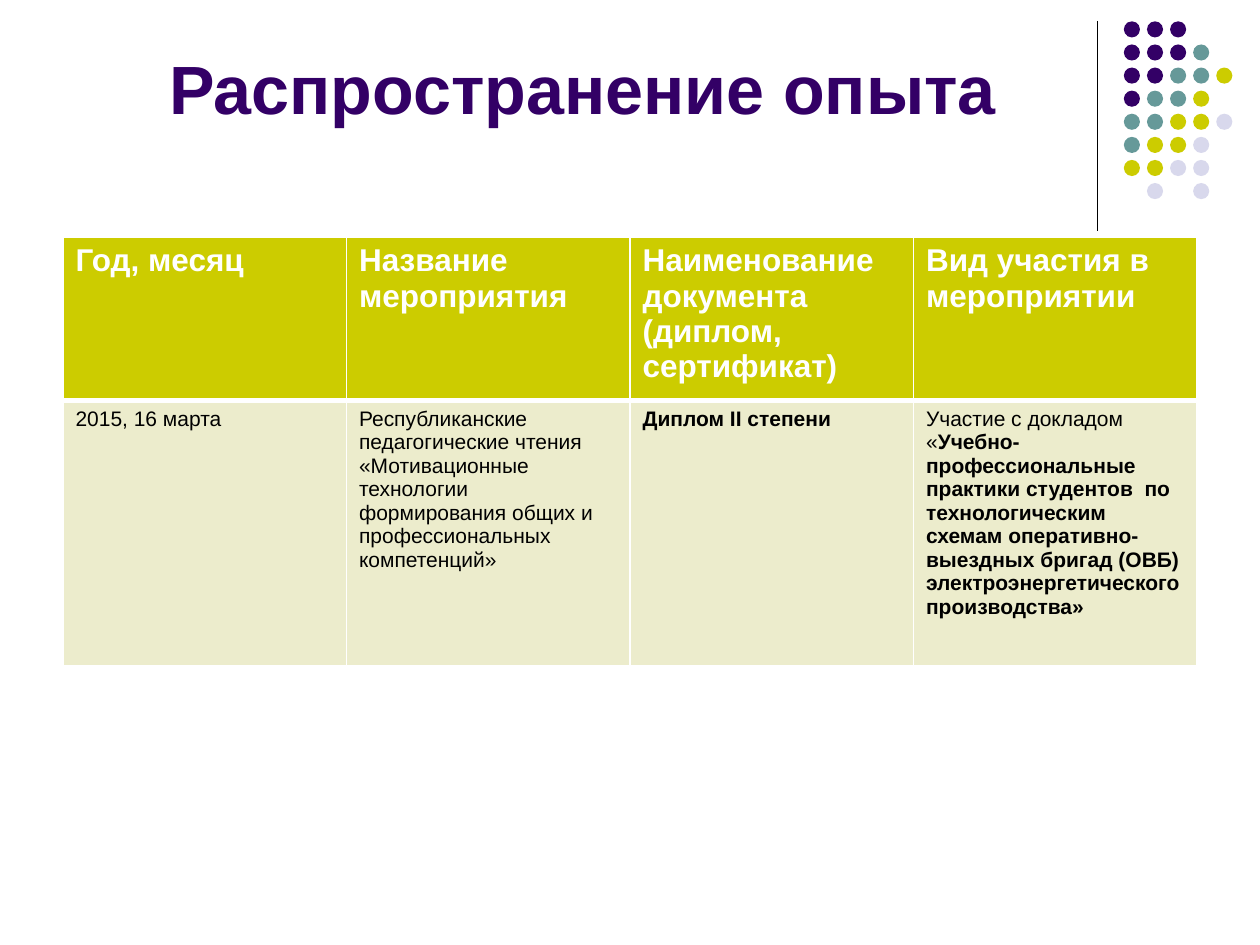
from typing import NamedTuple

from lxml import etree
from pptx import Presentation
from pptx.dml.color import RGBColor
from pptx.enum.shapes import MSO_CONNECTOR, MSO_SHAPE
from pptx.enum.text import MSO_ANCHOR, MSO_AUTO_SIZE, PP_ALIGN
from pptx.oxml.ns import qn
from pptx.util import Pt

STRAIGHT = MSO_CONNECTOR.STRAIGHT
OVAL = MSO_SHAPE.OVAL
BOTTOM = MSO_ANCHOR.BOTTOM
CENTER = PP_ALIGN.CENTER
NO_FIT = MSO_AUTO_SIZE.NONE

PURPLE = RGBColor(0x33, 0x00, 0x66)
TEAL = RGBColor(0x66, 0x99, 0x99)
LIME = RGBColor(0xCC, 0xCC, 0x00)
LILAC = RGBColor(0xD8, 0xD8, 0xEC)
CREAM = RGBColor(0xEC, 0xEC, 0xCC)
WHITE = RGBColor(0xFF, 0xFF, 0xFF)
BLACK = RGBColor(0x00, 0x00, 0x00)
FONT = "Arial"

# Dot pattern: one letter per dot, a blank for none
TONES = {"P": PURPLE, "T": TEAL, "L": LIME, "V": LILAC}
DOTS = ["PPP", "PPPT", "PPTTL", "PTTL", "TTLLV", "TLLV", "LLVV", " V V"]
DOT_LEFT, DOT_TOP, DOT_STEP, DOT_SIZE = 642.2, 12.2, 13.2, 9.2


class Piece(NamedTuple):
    text: str
    bold: bool = False


class Row(NamedTuple):
    height: float
    fill: RGBColor
    color: RGBColor
    size: float
    top: float
    base: float
    cells: list[list[Piece]]


ROWS = [
    Row(93.6, LIME, WHITE, 18, 1, 3, [
        [Piece("Год, месяц", True)],
        [Piece("Название мероприятия", True)],
        [Piece("Наименование документа (диплом, сертификат)", True)],
        [Piece("Вид участия в мероприятии", True)],
    ]),
    Row(151.2, CREAM, BLACK, 12, 3, 1, [
        [Piece("2015, 16 марта")],
        [Piece("Республиканские педагогические чтения «Мотивационные "
               "технологии формирования общих и профессиональных "
               "компетенций»")],
        [Piece("Диплом II степени", True)],
        [Piece("Участие с докладом «"),
         Piece("Учебно-профессиональные практики студентов  по "
               "технологическим схемам оперативно-выездных бригад (ОВБ) "
               "электроэнергетического производства»", True)],
    ]),
]


def add_run(para, piece: Piece, size: float, color: RGBColor) -> None:
    run = para.add_run()
    run.text = piece.text
    run.font.name = FONT
    run.font.size = Pt(size)
    run.font.bold = piece.bold
    run.font.color.rgb = color


def add_title(slide) -> None:
    title = slide.shapes.title
    title.left, title.top = Pt(36), Pt(9.4)
    title.width, title.height = Pt(594), Pt(67.6)
    frame = title.text_frame
    frame.auto_size = NO_FIT
    frame.word_wrap = True
    frame.vertical_anchor = BOTTOM
    para = frame.paragraphs[0]
    para.alignment = CENTER
    add_run(para, Piece("Распространение опыта", True), 39, PURPLE)


def add_rule(slide) -> None:
    rule = slide.shapes.add_connector(
        STRAIGHT, Pt(627), Pt(12), Pt(627), Pt(132))
    rule.line.color.rgb = BLACK
    rule.line.width = Pt(0.75)
    etree.SubElement(rule.element.spPr, qn("a:effectLst"))


def add_dots(slide) -> None:
    for row, line in enumerate(DOTS):
        for col, tone in enumerate(line):
            if tone not in TONES:
                continue
            dot = slide.shapes.add_shape(
                OVAL, Pt(DOT_LEFT + col * DOT_STEP),
                Pt(DOT_TOP + row * DOT_STEP), Pt(DOT_SIZE), Pt(DOT_SIZE))
            dot.shadow.inherit = False
            dot.fill.solid()
            dot.fill.fore_color.rgb = TONES[tone]
            dot.line.fill.background()


def add_edges(cell, top: float, base: float) -> None:
    props = cell._tc.get_or_add_tcPr()
    edges = [("a:lnL", 1), ("a:lnR", 1), ("a:lnT", top), ("a:lnB", base)]
    for place, (tag, width) in enumerate(edges):
        edge = etree.Element(qn(tag), w=str(Pt(width)))
        fill = etree.SubElement(edge, qn("a:solidFill"))
        etree.SubElement(fill, qn("a:srgbClr"), val=str(WHITE))
        props.insert(place, edge)


def add_grid(slide) -> None:
    cols = len(ROWS[0].cells)
    high = sum(row.height for row in ROWS)
    table = slide.shapes.add_table(
        len(ROWS), cols, Pt(36), Pt(135.4), Pt(648), Pt(high)).table
    for r, row in enumerate(ROWS):
        table.rows[r].height = Pt(row.height)
        for c, pieces in enumerate(row.cells):
            cell = table.cell(r, c)
            cell.fill.solid()
            cell.fill.fore_color.rgb = row.fill
            add_edges(cell, row.top, row.base)
            for piece in pieces:
                add_run(cell.text_frame.paragraphs[0], piece,
                        row.size, row.color)


def main() -> None:
    deck = Presentation()
    deck.slide_width, deck.slide_height = Pt(720), Pt(540)
    slide = deck.slides.add_slide(deck.slide_layouts[5])  # title only
    add_rule(slide)
    add_dots(slide)
    add_title(slide)
    add_grid(slide)
    deck.save("out.pptx")


if __name__ == "__main__":
    main()
